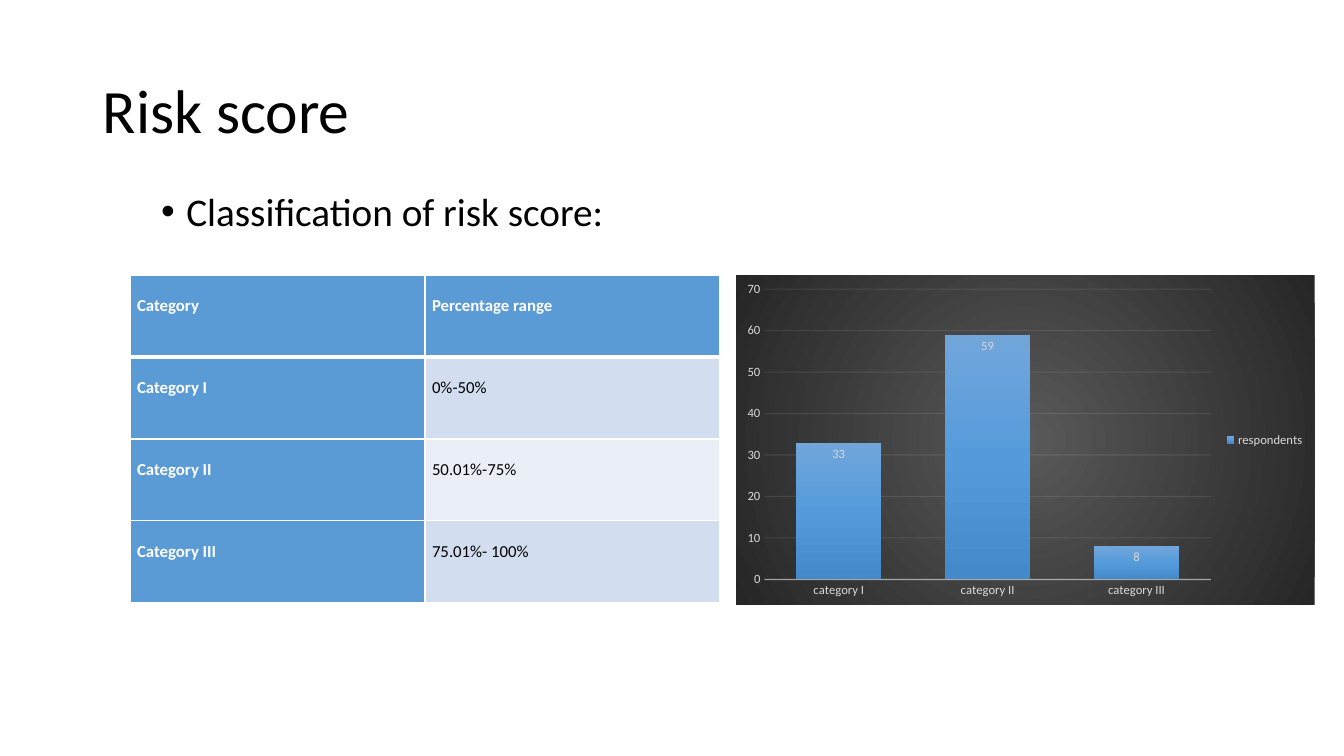
from lxml import etree
from pptx import Presentation
from pptx.chart.data import CategoryChartData
from pptx.dml.color import RGBColor
from pptx.enum.chart import XL_CHART_TYPE, XL_LABEL_POSITION, XL_LEGEND_POSITION, XL_TICK_MARK
from pptx.enum.text import MSO_ANCHOR, PP_ALIGN
from pptx.oxml import parse_xml
from pptx.oxml.ns import nsdecls, qn
from pptx.util import Inches, Pt

COLUMN_CLUSTERED = XL_CHART_TYPE.COLUMN_CLUSTERED
INSIDE_END = XL_LABEL_POSITION.INSIDE_END
LEGEND_RIGHT = XL_LEGEND_POSITION.RIGHT
NO_TICKS = XL_TICK_MARK.NONE
TOP, MIDDLE = MSO_ANCHOR.TOP, MSO_ANCHOR.MIDDLE
JUSTIFY = PP_ALIGN.JUSTIFY

FONT = "Calibri"
BLACK = RGBColor(0x00, 0x00, 0x00)
WHITE = RGBColor(0xFF, 0xFF, 0xFF)
BLUE = RGBColor(0x5B, 0x9B, 0xD5)
BAND_DARK = RGBColor(0xD2, 0xDE, 0xEF)
BAND_LIGHT = RGBColor(0xEA, 0xEF, 0xF7)
CHART_TEXT = RGBColor(0xD9, 0xD9, 0xD9)
CHART_LINE = RGBColor(0xF2, 0xF2, 0xF2)
CHART_CENTRE = RGBColor(0x59, 0x59, 0x59)
CHART_EDGE = RGBColor(0x26, 0x26, 0x26)
BAR_TOP = RGBColor(0x71, 0xA6, 0xDB)
BAR_MIDDLE = RGBColor(0x55, 0x9B, 0xDB)
BAR_BOTTOM = RGBColor(0x44, 0x8A, 0xCA)

RANGES = [
    ("Category", "Percentage range"),
    ("Category I", "0%-50%"),
    ("Category II", "50.01%-75%"),
    ("Category III", "75.01%- 100%"),
]
RESPONDENTS = {"category I": 33, "category II": 59, "category III": 8}

LINEAR_DOWN = '<a:lin ang="5400000" scaled="0"/>'
CIRCLE = ('<a:path path="circle">'
          '<a:fillToRect l="50000" t="50000" r="50000" b="50000"/></a:path>')


def set_font(font, size, color, bold=False):
    font.name = FONT
    font.size = Pt(size)
    font.bold = bold
    font.color.rgb = color


def add_text(slide, box, text, size, anchor):
    shape = slide.shapes.add_textbox(*(Inches(length) for length in box))
    frame = shape.text_frame
    frame.word_wrap = True
    frame.vertical_anchor = anchor
    paragraph = frame.paragraphs[0]
    paragraph.text = text
    paragraph.line_spacing = 0.9
    set_font(paragraph.font, size, BLACK)
    return paragraph


def add_bullet(paragraph):
    properties = paragraph._p.get_or_add_pPr()
    properties.set("marL", str(Inches(0.25)))
    properties.set("indent", str(-Inches(0.25)))
    bullet_font = parse_xml(f'<a:buFont {nsdecls("a")} typeface="Arial"/>')
    bullet = parse_xml(f'<a:buChar {nsdecls("a")} char="•"/>')
    properties.insert_element_before(bullet_font, "a:buChar", "a:tabLst", "a:defRPr")
    properties.insert_element_before(bullet, "a:tabLst", "a:defRPr")


def set_borders(cell, widths):
    """Draw white borders; widths gives points for left, right, top, bottom."""
    properties = cell._tc.get_or_add_tcPr()
    for position, (side, width) in enumerate(zip("LRTB", widths)):
        border = parse_xml(
            f'<a:ln{side} {nsdecls("a")} w="{Pt(width)}"><a:solidFill>'
            f'<a:srgbClr val="{WHITE}"/></a:solidFill></a:ln{side}>')
        properties.insert(position, border)


def cell_fill(row, column):
    if row == 0 or column == 0:
        return BLUE
    return BAND_DARK if row % 2 else BAND_LIGHT


def add_range_table(slide):
    frame = slide.shapes.add_table(len(RANGES), 2, Inches(1.29), Inches(2.73),
                                   Inches(5.85), Inches(3.25))
    table = frame.table
    for row, texts in enumerate(RANGES):
        for column, text in enumerate(texts):
            cell = table.cell(row, column)
            cell.margin_left = cell.margin_right = Inches(0.07)
            cell.margin_top = cell.margin_bottom = 0
            cell.fill.solid()
            cell.fill.fore_color.rgb = cell_fill(row, column)
            set_borders(cell, (1, 1, 3 if row == 1 else 1, 3 if row == 0 else 1))
            paragraph = cell.text_frame.paragraphs[0]
            paragraph.text = text
            paragraph.alignment = JUSTIFY
            paragraph.line_spacing = 2.0
            heading = row == 0 or column == 0
            set_font(paragraph.font, 12, WHITE if heading else BLACK, heading)


def gradient_properties(stops, direction):
    """Return chart shape properties with a gradient of (percent, color) stops."""
    stop_list = "".join(
        f'<a:gs pos="{percent * 1000}"><a:srgbClr val="{color}"/></a:gs>'
        for percent, color in stops)
    return parse_xml(
        f'<c:spPr {nsdecls("c", "a")}><a:gradFill rotWithShape="1"><a:gsLst>{stop_list}'
        f'</a:gsLst>{direction}</a:gradFill><a:ln><a:noFill/></a:ln></c:spPr>')


def style_line(line, parent, width, opacity):
    line.color.rgb = CHART_LINE
    line.width = Pt(width)
    for color in parent.xpath("./c:spPr/a:ln//a:srgbClr"):
        etree.SubElement(color, qn("a:alpha")).set("val", str(opacity * 1000))


def style_axes(chart):
    for axis in (chart.category_axis, chart.value_axis):
        axis.major_tick_mark = axis.minor_tick_mark = NO_TICKS
        set_font(axis.tick_labels.font, 9, CHART_TEXT)
    category_axis, value_axis = chart.category_axis, chart.value_axis
    style_line(category_axis.format.line, chart.element.xpath(".//c:catAx")[0], 1, 54)
    value_axis.format.line.fill.background()
    value_axis.minimum_scale, value_axis.maximum_scale = 0, 70
    value_axis.major_unit = 10
    value_axis.has_major_gridlines = True
    style_line(value_axis.major_gridlines.format.line,
               chart.element.xpath(".//c:majorGridlines")[0], 0.75, 10)


def add_respondent_chart(slide):
    data = CategoryChartData()
    data.categories = list(RESPONDENTS)
    data.add_series("respondents", list(RESPONDENTS.values()))
    chart = slide.shapes.add_chart(COLUMN_CLUSTERED, Inches(7.3), Inches(2.73),
                                   Inches(5.74), Inches(3.27), data).chart
    chart.has_title = False
    set_font(chart.font, 10, BLACK)
    chart.has_legend = True
    chart.legend.position = LEGEND_RIGHT
    chart.legend.include_in_layout = False
    set_font(chart.legend.font, 9, CHART_TEXT)
    style_axes(chart)

    # Columns and their labels
    plot = chart.plots[0]
    plot.vary_by_categories = False
    plot.gap_width = 75
    plot.overlap = 40
    series = plot.series[0]
    labels = series.data_labels
    labels.show_value = True
    labels.position = INSIDE_END
    set_font(labels.font, 9, CHART_TEXT)
    bar_stops = [(0, BAR_TOP), (50, BAR_MIDDLE), (100, BAR_BOTTOM)]
    chart.element.xpath(".//c:ser/c:tx")[0].addnext(
        gradient_properties(bar_stops, LINEAR_DOWN))

    # Dark background
    chart.element.xpath("./c:chart")[0].addnext(
        gradient_properties([(0, CHART_CENTRE), (100, CHART_EDGE)], CIRCLE))


def main():
    presentation = Presentation()
    presentation.slide_width = Inches(13.33)
    presentation.slide_height = Inches(7.5)
    slide = presentation.slides.add_slide(presentation.slide_layouts[6])

    # Heading and lead-in
    add_text(slide, (0.92, 0.4, 11.5, 1.45), "Risk score", 44, MIDDLE)
    lead_in = add_text(slide, (1.5, 1.86, 10.5, 4.56),
                       "Classification of risk score:", 28, TOP)
    lead_in.space_before = Pt(10)
    add_bullet(lead_in)

    # Ranges and results
    add_range_table(slide)
    add_respondent_chart(slide)
    presentation.save("out.pptx")


if __name__ == "__main__":
    main()
